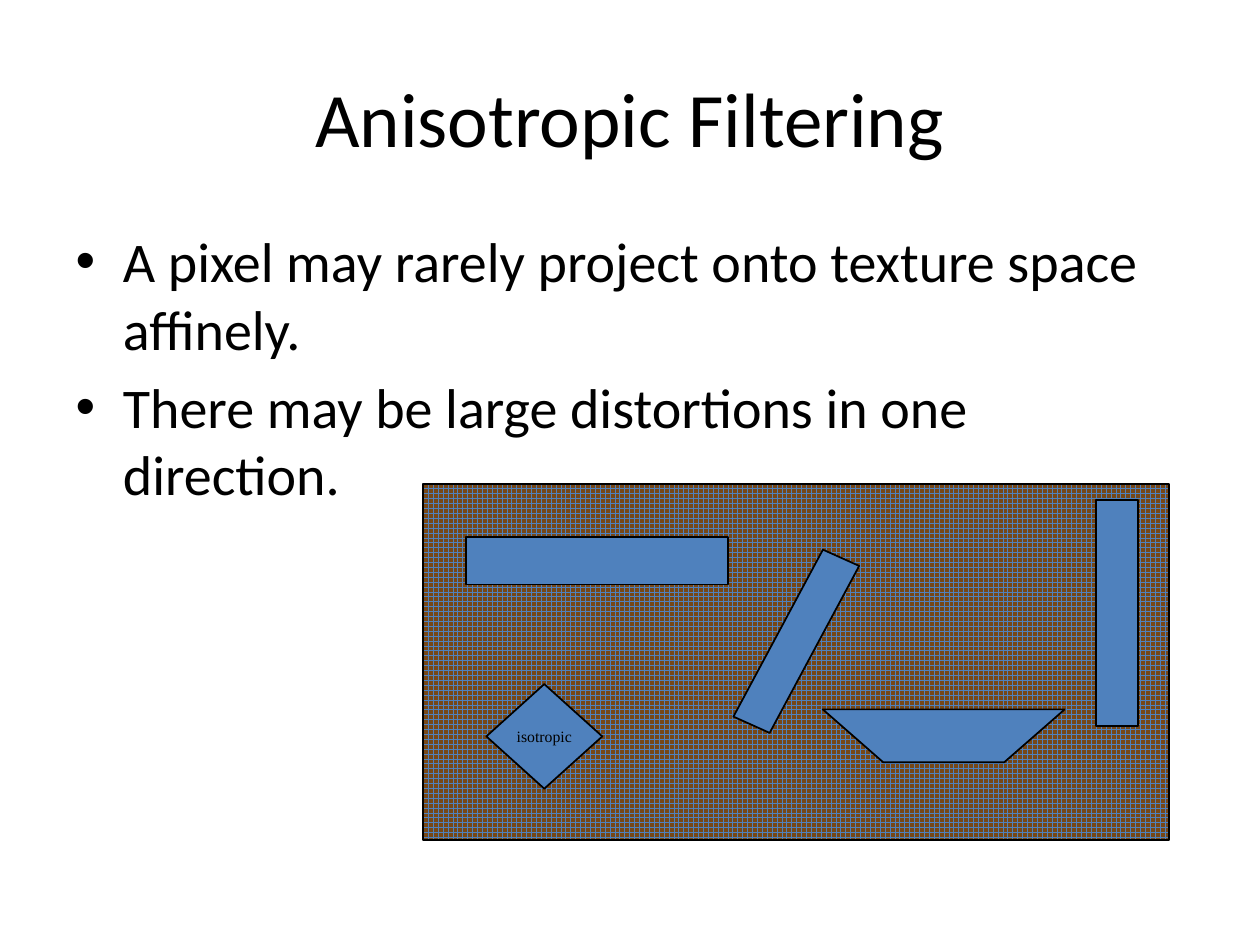
from pptx import Presentation
from pptx.dml.color import RGBColor
from pptx.enum.dml import MSO_PATTERN
from pptx.enum.shapes import MSO_SHAPE
from pptx.enum.text import MSO_ANCHOR, PP_ALIGN
from pptx.util import Inches, Pt

BLACK = "000000"
BLUE = "4F81BD"
BROWN = "764717"


def color(value):
    """Turn a hex string into a colour."""
    return RGBColor.from_string(value)


def set_text(shape, lines, font_name, size, alignment, anchor):
    """Write one paragraph per line and format the runs."""
    frame = shape.text_frame
    frame.text = "\n".join(lines)
    frame.vertical_anchor = anchor
    for paragraph in frame.paragraphs:
        paragraph.alignment = alignment
        for run in paragraph.runs:
            run.font.name = font_name
            run.font.size = Pt(size)
            run.font.color.rgb = color(BLACK)


def fill_placeholder(placeholder, box, lines, size, alignment, anchor):
    """Place a template placeholder and fill in its text."""
    placeholder.left, placeholder.top, placeholder.width, placeholder.height = map(Inches, box)
    set_text(placeholder, lines, "Calibri", size, alignment, anchor)


def style_shape(shape):
    """Give a shape the blue fill and thin black outline."""
    shape.shadow.inherit = False
    shape.fill.solid()
    shape.fill.fore_color.rgb = color(BLUE)
    shape.line.color.rgb = color(BLACK)
    shape.line.width = Pt(1)


def add_footprint(slide, kind, box, rotation=0):
    """Add a preset outline of a projected pixel."""
    shape = slide.shapes.add_shape(kind, *map(Inches, box))
    shape.rotation = rotation
    style_shape(shape)
    return shape


def add_polygon(slide, points):
    """Add a closed outline through the given points."""
    start, *others = [(Inches(x), Inches(y)) for x, y in points]
    builder = slide.shapes.build_freeform(*start)
    builder.add_line_segments(others, close=True)
    style_shape(builder.convert_to_shape())


def add_texture(slide, box):
    """Add the gridded rectangle that stands for texture space."""
    texture = add_footprint(slide, MSO_SHAPE.RECTANGLE, box)
    texture.fill.patterned()
    texture.fill.pattern = MSO_PATTERN.LARGE_GRID
    texture.fill.fore_color.rgb = color(BLUE)
    texture.fill.back_color.rgb = color(BROWN)


def main():
    """Build the slide and save it."""
    presentation = Presentation()
    presentation.slide_width, presentation.slide_height = Inches(10), Inches(7.5)
    slide = presentation.slides.add_slide(presentation.slide_layouts[1])

    fill_placeholder(slide.shapes.title, (0.5, 0.3, 9, 1.25), ["Anisotropic Filtering"],
                     44, PP_ALIGN.CENTER, MSO_ANCHOR.MIDDLE)
    fill_placeholder(slide.placeholders[1], (0.5, 1.75, 9, 4.95),
                     ["A pixel may rarely project onto texture space affinely.",
                      "There may be large distortions in one direction."],
                     32, PP_ALIGN.LEFT, MSO_ANCHOR.TOP)

    add_texture(slide, (3.36, 3.84, 5.92, 2.83))
    diamond = add_footprint(slide, MSO_SHAPE.DIAMOND, (3.86, 5.43, 0.92, 0.83))
    set_text(diamond, ["isotropic"], "Times New Roman", 9, PP_ALIGN.CENTER, MSO_ANCHOR.MIDDLE)
    diamond.text_frame.word_wrap = False
    add_polygon(slide, [(6.53, 5.63), (7.01, 6.05), (7.97, 6.05), (8.45, 5.63)])
    add_footprint(slide, MSO_SHAPE.PARALLELOGRAM, (6.11, 4.34, 0.42, 1.5), rotation=24.2)
    add_footprint(slide, MSO_SHAPE.RECTANGLE, (3.7, 4.26, 2.08, 0.38))
    add_footprint(slide, MSO_SHAPE.RECTANGLE, (8.7, 3.97, 0.33, 1.79))

    presentation.save("out.pptx")


if __name__ == "__main__":
    main()
